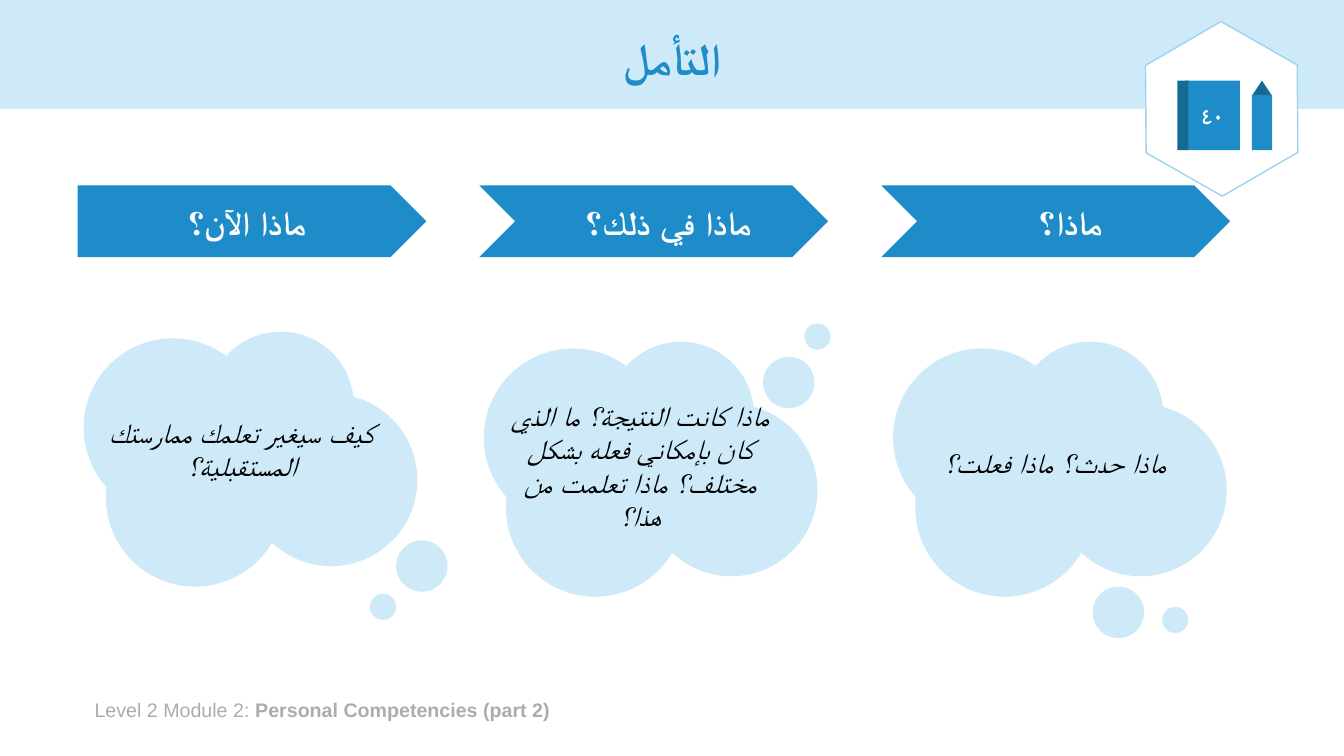
from dataclasses import dataclass

from lxml.etree import SubElement
from pptx import Presentation
from pptx.dml.color import RGBColor
from pptx.enum.shapes import MSO_SHAPE as Preset
from pptx.enum.text import MSO_ANCHOR as Anchor, MSO_AUTO_SIZE as AutoSize, PP_ALIGN as Align
from pptx.oxml.ns import qn
from pptx.util import Inches, Pt

COLUMNS, ROWS = 40, 22.5
SLIDE_WIDTH, SLIDE_HEIGHT = Inches(13.333), Inches(7.5)


@dataclass(frozen=True)
class Theme:
    font: str = "Arial"
    main: str = "1D8CC8"
    dark: str = "156995"
    pale: str = "CEE9F8"
    outline: str = "9BD3F1"
    white: str = "FFFFFF"
    black: str = "000000"
    grey: str = "AFABAB"
    title_size: int = 32
    label_size: int = 24
    body_size: int = 20
    badge_size: int = 16
    footer_size: int = 14


THEME = Theme()

ARROW_LEFT, ARROW_STEP = 2.31, 11.96
ARROWS = [
    (Preset.PENTAGON, "ماذا الآن؟", (4.17, 6.36)),
    (Preset.CHEVRON, "ماذا في ذلك؟", (16.71, 6.36)),
    (Preset.CHEVRON, "ماذا؟", (27.6, 8.52)),
]

LOBES = [(0, 0.2, 5.31), (3.69, 0, 4.35), (0.66, 2.28, 5.31), (4.8, 1.85, 5.13)]
BUBBLE_SIZES = (1.53, 0.78)
CLOUDS = [
    ((2.49, 9.87), [(9.3, 6.21), (8.52, 7.8)],
     "كيف سيغير تعلمك ممارستك المستقبلية؟", (2.94, 12.21, 8.49, 3.33)),
    ((14.4, 10.17), [(8.31, 0.45), (9.54, -0.54)],
     "ماذا كانت النتيجة؟ ما الذي كان بإمكاني فعله بشكل مختلف؟ ماذا تعلمت من هذا؟",
     (14.73, 11.7, 8.64, 5.34)),
    ((26.58, 10.17), [(5.94, 7.29), (8.01, 7.89)],
     "ماذا حدث؟ ماذا فعلت؟", (21.39, 13.11, 20.01, 1.32)),
]


def place(left, top, width, height):
    return (
        int(SLIDE_WIDTH * left / COLUMNS),
        int(SLIDE_HEIGHT * top / ROWS),
        int(SLIDE_WIDTH * width / COLUMNS),
        int(SLIDE_HEIGHT * height / ROWS),
    )


def add_block(shapes, preset, box, fill, line=None):
    shape = shapes.add_shape(preset, *place(*box))
    shape.shadow.inherit = False
    shape.fill.solid()
    shape.fill.fore_color.rgb = RGBColor.from_string(fill)
    if line:
        shape.line.color.rgb = RGBColor.from_string(line)
        shape.line.width = Pt(1)
    else:
        shape.line.fill.background()
    return shape


def style_paragraph(paragraph, size, color, bold=None, italic=None):
    font = paragraph.font
    font.name = THEME.font
    font.size = Pt(size)
    font.bold = bold
    font.italic = italic
    font.color.rgb = RGBColor.from_string(color)


def write_arabic(frame, text, size, color, bold=None, italic=None, complex_font=None):
    frame.text = text
    paragraph = frame.paragraphs[0]
    paragraph.alignment = Align.CENTER
    style_paragraph(paragraph, size, color, bold, italic)
    properties = paragraph._p.get_or_add_pPr()
    properties.set("rtl", "1")
    if complex_font:
        defaults = properties.find(qn("a:defRPr"))
        SubElement(defaults, qn("a:cs")).set("typeface", complex_font)
    return paragraph


def add_text_box(slide, box):
    frame = slide.shapes.add_textbox(*place(*box)).text_frame
    frame.word_wrap = True
    frame.auto_size = AutoSize.SHAPE_TO_FIT_TEXT
    return frame


def add_header(slide):
    title = slide.shapes.title
    band = add_block(slide.shapes, Preset.RECTANGLE, (0, 0, COLUMNS, 3.24), THEME.pale)
    title.element.addprevious(band.element)
    title.left, title.top, title.width, title.height = place(2.76, 0.39, 34.5, 2.85)
    title.text_frame.vertical_anchor = Anchor.MIDDLE
    paragraph = write_arabic(title.text_frame, "التأمل", THEME.title_size, THEME.main,
                             bold=True, complex_font=THEME.font)
    paragraph.line_spacing = 0.9


def add_footer(slide):
    paragraph = add_text_box(slide, (2.52, 20.61, 25.68, 1.02)).paragraphs[0]
    style_paragraph(paragraph, THEME.footer_size, THEME.grey)
    paragraph.add_run().text = "Level 2 Module 2: "
    module = paragraph.add_run()
    module.text = "Personal Competencies (part 2)"
    module.font.bold = True


def add_arrow(slide, index, preset, label, label_span):
    left = ARROW_LEFT + index * ARROW_STEP
    add_block(slide.shapes, preset, (left, 5.52, 10.38, 2.13), THEME.main)
    label_left, label_width = label_span
    frame = add_text_box(slide, (label_left, 5.85, label_width, 1.5))
    write_arabic(frame, label, THEME.label_size, THEME.white, bold=True)


def add_cloud(slide, origin, bubbles, text, text_box):
    group = slide.shapes.add_group_shape()
    trail = [(x, y, size) for (x, y), size in zip(bubbles, BUBBLE_SIZES)]
    for x, y, size in LOBES + trail:
        box = (origin[0] + x, origin[1] + y, size, size)
        add_block(group.shapes, Preset.OVAL, box, THEME.pale)
    frame = add_text_box(slide, text_box)
    write_arabic(frame, text, THEME.body_size, THEME.black, italic=True)


def add_page_badge(slide):
    shapes = slide.shapes.add_group_shape().shapes
    hexagon = add_block(shapes, Preset.HEXAGON, (33.75, 0.99, 5.22, 4.5),
                        THEME.white, THEME.outline)
    hexagon.adjustments[0] = 0.29
    hexagon.rotation = 29.7
    book = add_block(shapes, Preset.RECTANGLE, (35.28, 2.4, 1.62, 2.07), THEME.main)
    book.text_frame.word_wrap = False
    book.text_frame.vertical_anchor = Anchor.MIDDLE
    write_arabic(book.text_frame, "٤٠", THEME.badge_size, THEME.white,
                 bold=True, complex_font=THEME.font)
    add_block(shapes, Preset.RECTANGLE, (35.04, 2.4, 0.33, 2.07), THEME.dark)
    add_block(shapes, Preset.ISOSCELES_TRIANGLE, (37.26, 2.4, 0.6, 0.45), THEME.dark)
    add_block(shapes, Preset.RECTANGLE, (37.26, 2.82, 0.6, 1.65), THEME.main)


def main():
    presentation = Presentation()
    presentation.slide_width, presentation.slide_height = SLIDE_WIDTH, SLIDE_HEIGHT
    slide = presentation.slides.add_slide(presentation.slide_layouts.get_by_name("Title Only"))
    add_header(slide)
    add_footer(slide)
    for index, arrow in enumerate(ARROWS):
        add_arrow(slide, index, *arrow)
    for cloud in CLOUDS:
        add_cloud(slide, *cloud)
    add_page_badge(slide)
    presentation.save("out.pptx")


if __name__ == "__main__":
    main()
